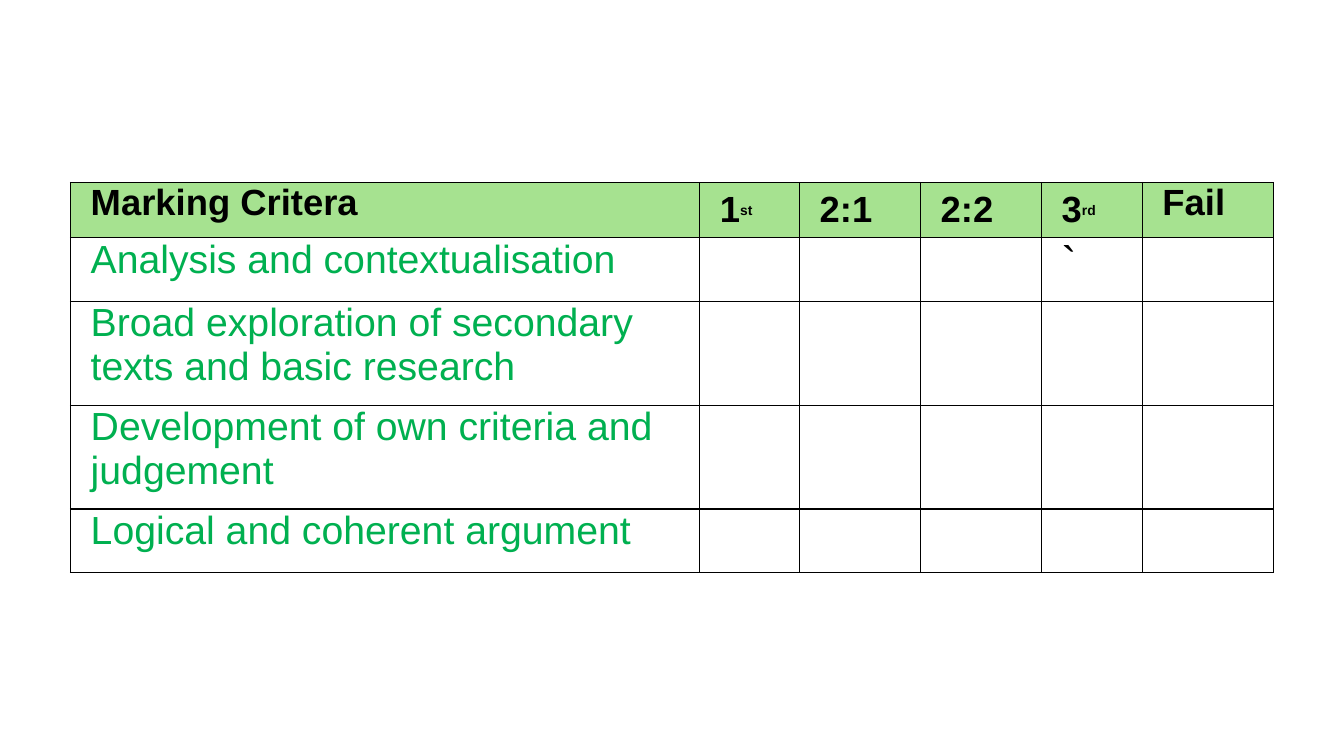
from dataclasses import dataclass

from lxml import etree
from pptx import Presentation
from pptx.dml.color import RGBColor
from pptx.enum.text import MSO_ANCHOR, PP_ALIGN
from pptx.oxml.ns import qn
from pptx.table import _Cell
from pptx.util import Inches, Pt

TOP, MIDDLE = MSO_ANCHOR.TOP, MSO_ANCHOR.MIDDLE
LEFT, JUSTIFY = PP_ALIGN.LEFT, PP_ALIGN.JUSTIFY


@dataclass(frozen=True)
class Theme:
    font: str = "Arial"
    black: str = "000000"
    green: str = "00B050"
    header_fill: str = "A6E290"
    header_size: int = 26
    ordinal_size: int = 17
    criterion_size: int = 28
    mark_size: int = 32
    border_width: int = 1


@dataclass(frozen=True)
class Grade:
    text: str
    ordinal: str = ""
    anchor: MSO_ANCHOR = MIDDLE


THEME = Theme()
HEADERS = [
    Grade("Marking Critera", anchor=TOP),
    Grade("1", "st"),
    Grade("2:1"),
    Grade("2:2"),
    Grade("3", "rd"),
    Grade("Fail", anchor=TOP),
]
CRITERIA = [
    "Analysis and contextualisation",
    "Broad exploration of secondary texts and basic research",
    "Development of own criteria and judgement",
    "Logical and coherent argument",
]
COLUMN_WIDTHS = [6.24, 0.99, 1.2, 1.2, 1, 1.3]
ROW_HEIGHTS = [0.55, 0.63, 1.03, 1.03, 0.63]


def add_borders(cell: _Cell) -> None:
    tc_pr = cell._tc.get_or_add_tcPr()
    for side in ("a:lnL", "a:lnR", "a:lnT", "a:lnB"):
        ln = etree.SubElement(tc_pr, qn(side), w=str(Pt(THEME.border_width)))
        fill = etree.SubElement(ln, qn("a:solidFill"))
        etree.SubElement(fill, qn("a:srgbClr"), val=THEME.black)


def write(cell: _Cell, text: str, size: int, color: str, bold: bool = False,
          ordinal: str = "", anchor: MSO_ANCHOR = TOP,
          align: PP_ALIGN = LEFT) -> None:
    cell.margin_left = cell.margin_right = Inches(0.2)
    cell.margin_top = cell.margin_bottom = 0
    cell.vertical_anchor = anchor
    p = cell.text_frame.paragraphs[0]
    p.text = text
    p.alignment = align
    if ordinal:
        r = p.add_run()
        r.text = ordinal
        r._r.get_or_add_rPr().set("baseline", "30000")
    for r, run_size in zip(p.runs, (size, THEME.ordinal_size)):
        r.font.name = THEME.font
        r.font.size = Pt(run_size)
        r.font.bold = bold
        r.font.color.rgb = RGBColor.from_string(color)


def main() -> None:
    prs = Presentation()
    prs.slide_width, prs.slide_height = Inches(13.33), Inches(7.5)
    s = prs.slides.add_slide(prs.slide_layouts[6])
    table = s.shapes.add_table(
        len(ROW_HEIGHTS), len(COLUMN_WIDTHS), Inches(0.7), Inches(1.81),
        Inches(sum(COLUMN_WIDTHS)), Inches(sum(ROW_HEIGHTS))).table
    table.first_row = table.horz_banding = False
    for column, width in zip(table.columns, COLUMN_WIDTHS):
        column.width = Inches(width)
    for row, height in zip(table.rows, ROW_HEIGHTS):
        row.height = Inches(height)
    for cell in table.iter_cells():
        add_borders(cell)
        cell.fill.background()

    for col, grade in enumerate(HEADERS):
        cell = table.cell(0, col)
        cell.fill.solid()
        cell.fill.fore_color.rgb = RGBColor.from_string(THEME.header_fill)
        write(cell, grade.text, THEME.header_size, THEME.black, True,
              grade.ordinal, grade.anchor)
    for row, criterion in enumerate(CRITERIA, start=1):
        write(table.cell(row, 0), criterion, THEME.criterion_size, THEME.green)
    write(table.cell(1, 4), "`", THEME.mark_size, THEME.black, align=JUSTIFY)
    prs.save("out.pptx")


if __name__ == "__main__":
    main()
